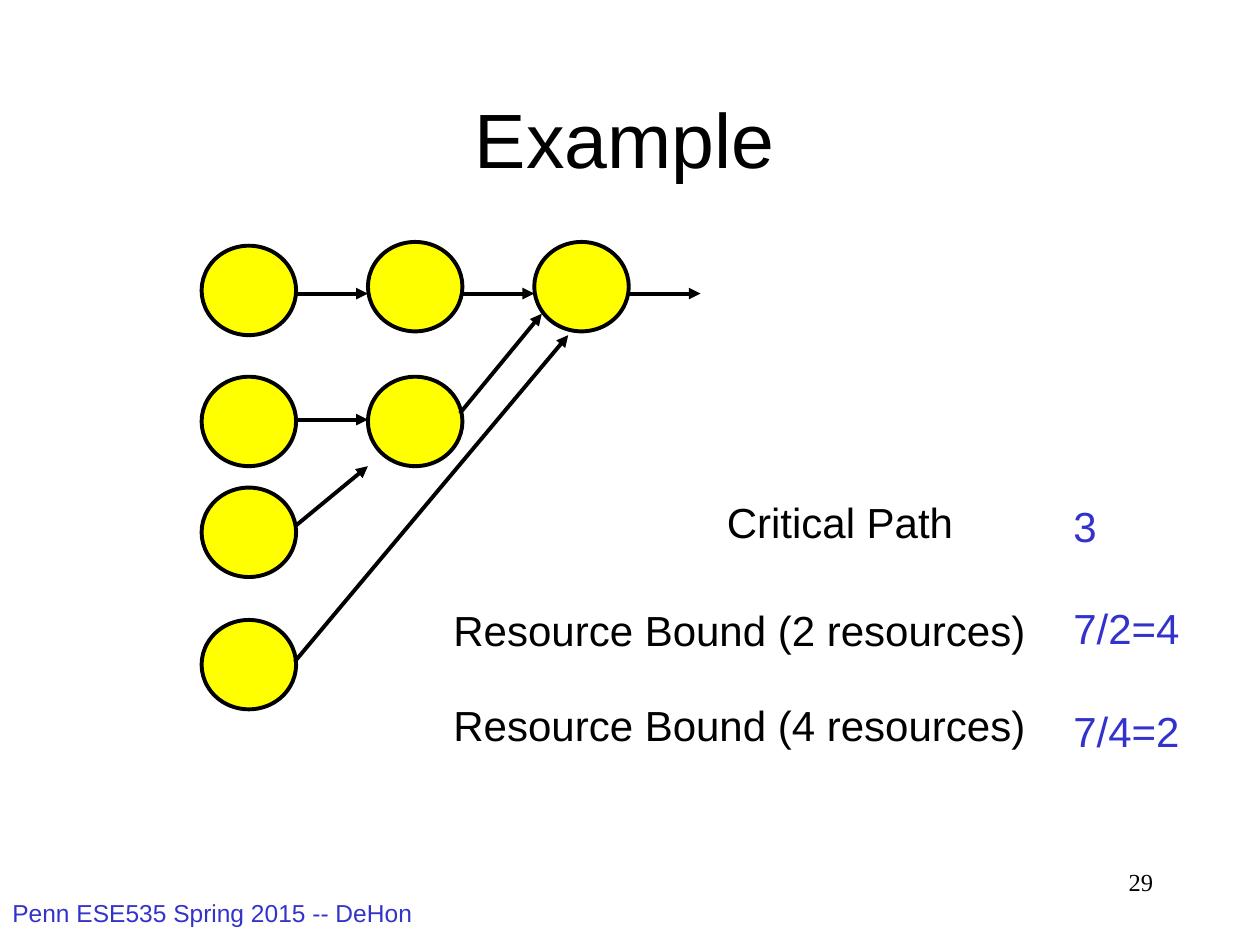
from lxml.etree import SubElement
from pptx import Presentation
from pptx.dml.color import RGBColor
from pptx.enum.shapes import MSO_CONNECTOR, MSO_SHAPE
from pptx.enum.text import MSO_ANCHOR, PP_ALIGN
from pptx.oxml.ns import qn
from pptx.util import Inches, Pt

COLORS = {"ink": "000000", "node": "FFFF00", "accent": "3333CC"}
NODE_WIDTH, NODE_HEIGHT = 0.75, 0.71
LEFT_MARGIN, COLUMN_PITCH = 1.6, 1.32
NODES = [(0, 1.95), (0, 2.99), (0, 3.87), (0, 4.92), (1, 1.92), (1, 2.99), (2, 1.92)]
LEVEL_ARROWS = [(0, 2.33), (1, 2.33), (2, 2.33), (0, 3.33)]
SLANTED_ARROWS = [
    ((2.35, 4.17), (2.92, 3.7)),
    ((2.34, 5.25), (4.51, 2.66)),
    ((3.65, 3.28), (4.3, 2.49)),
]
LABELS = [
    ("Critical Path", (5.67, 3.89, 2, 0.5)),
    ("Resource Bound (2 resources)", (3.5, 4.75, 4.74, 0.5)),
    ("Resource Bound (4 resources)", (3.5, 5.5, 4.74, 0.5)),
]


def color(name):
    """Return the named colour."""
    return RGBColor.from_string(COLORS[name])


def column(index):
    """Return the left edge of a node column in inches."""
    return LEFT_MARGIN + index * COLUMN_PITCH


def apply(target, values):
    """Set every attribute in values on the target."""
    for name, value in values.items():
        setattr(target, name, value)


def add_text(page, lines, area, size=24, ink="ink", font="Arial", frame=None, paragraph=None, gap=0):
    """Add a text box with one paragraph per line."""
    box = page.shapes.add_textbox(*map(Inches, area))
    apply(box.text_frame, {"word_wrap": False, **(frame or {})})
    for index, line in enumerate(lines):
        para = box.text_frame.paragraphs[0] if index == 0 else box.text_frame.add_paragraph()
        apply(para, {"space_before": Pt(gap if index else 0), **(paragraph or {})})
        span = para.add_run()
        span.text = line
        apply(span.font, {"name": font, "size": Pt(size)})
        span.font.color.rgb = color(ink)


def draw_line(line):
    """Give an outline the diagram's stroke."""
    line.color.rgb = color("ink")
    line.width = Pt(2.25)


def add_node(page, index, top):
    """Add an operator ellipse in a column."""
    area = (column(index), top, NODE_WIDTH, NODE_HEIGHT)
    node = page.shapes.add_shape(MSO_SHAPE.OVAL, *map(Inches, area))
    node.shadow.inherit = False
    node.fill.solid()
    node.fill.fore_color.rgb = color("node")
    draw_line(node.line)


def add_arrow(page, start, end):
    """Add a straight arrow between two points."""
    arrow = page.shapes.add_connector(MSO_CONNECTOR.STRAIGHT, *map(Inches, start + end))
    draw_line(arrow.line)
    properties = arrow.element.spPr
    SubElement(properties.find(qn("a:ln")), qn("a:tailEnd"), type="triangle")
    SubElement(properties, qn("a:effectLst"))


def main():
    """Build and save the slide."""
    deck = Presentation()
    apply(deck, {"slide_width": Inches(10), "slide_height": Inches(7.5)})
    page = deck.slides.add_slide(deck.slide_layouts[6])

    add_text(page, ["Penn ESE535 Spring 2015 -- DeHon"], (0, 7.08, 3.83, 0.42), 14, "accent",
             frame={"word_wrap": True})
    add_text(page, ["29"], (7.17, 6.83, 2.08, 0.5), 14, font="Times New Roman",
             frame={"word_wrap": True}, paragraph={"alignment": PP_ALIGN.RIGHT})
    add_text(page, ["Example"], (0.71, 0.47, 8.5, 1.25), 44,
             frame={"word_wrap": True, "vertical_anchor": MSO_ANCHOR.MIDDLE},
             paragraph={"alignment": PP_ALIGN.CENTER})

    for index, top in NODES:
        add_node(page, index, top)
    for index, height in LEVEL_ARROWS:
        add_arrow(page, (column(index) + NODE_WIDTH, height), (column(index + 1), height))
    for start, end in SLANTED_ARROWS:
        add_arrow(page, start, end)

    for label, area in LABELS:
        add_text(page, [label], area)
    add_text(page, ["3", "7/2=4", "7/4=2"], (8.42, 3.92, 1.05, 2.1), ink="accent", gap=30)
    deck.save("out.pptx")


if __name__ == "__main__":
    main()
